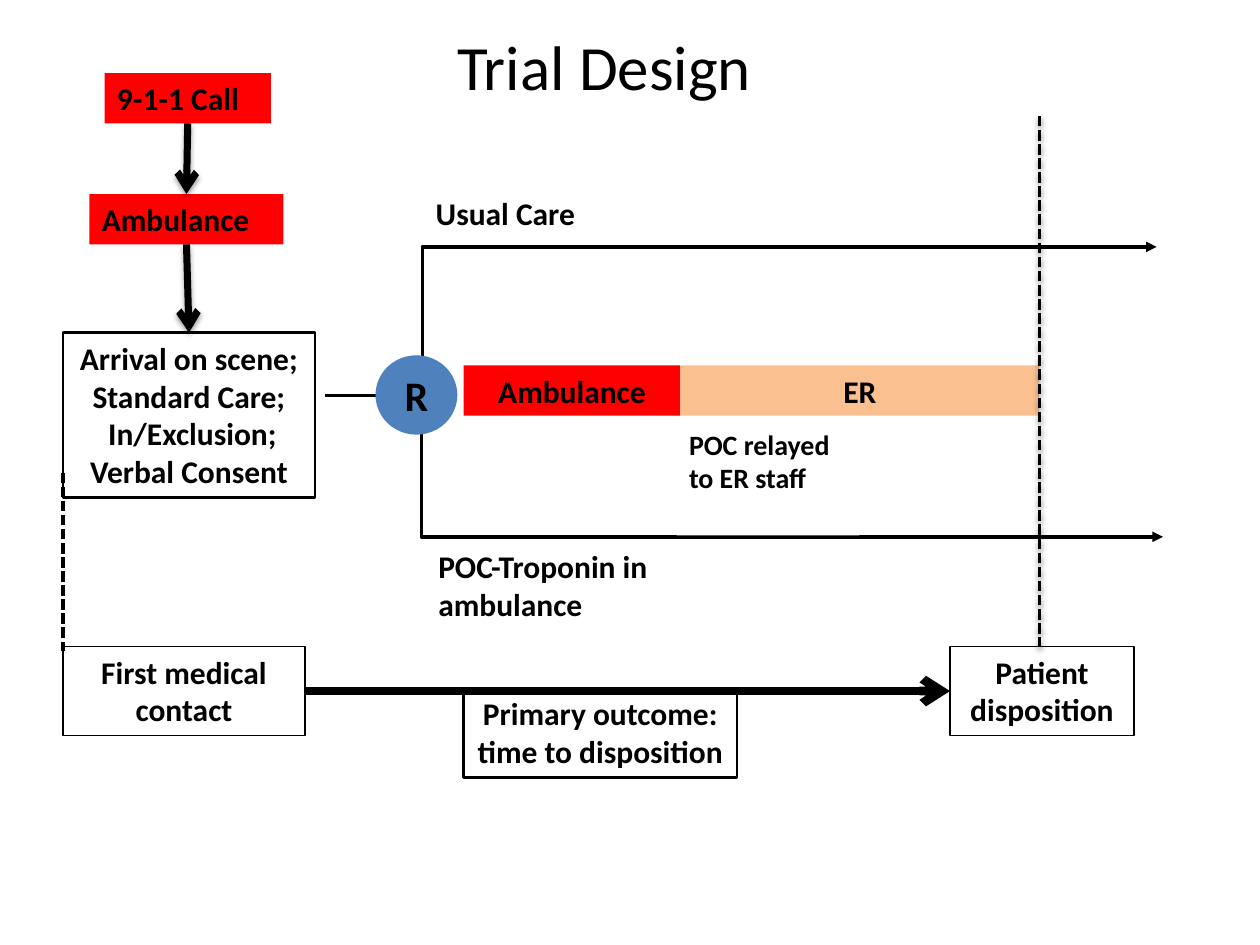
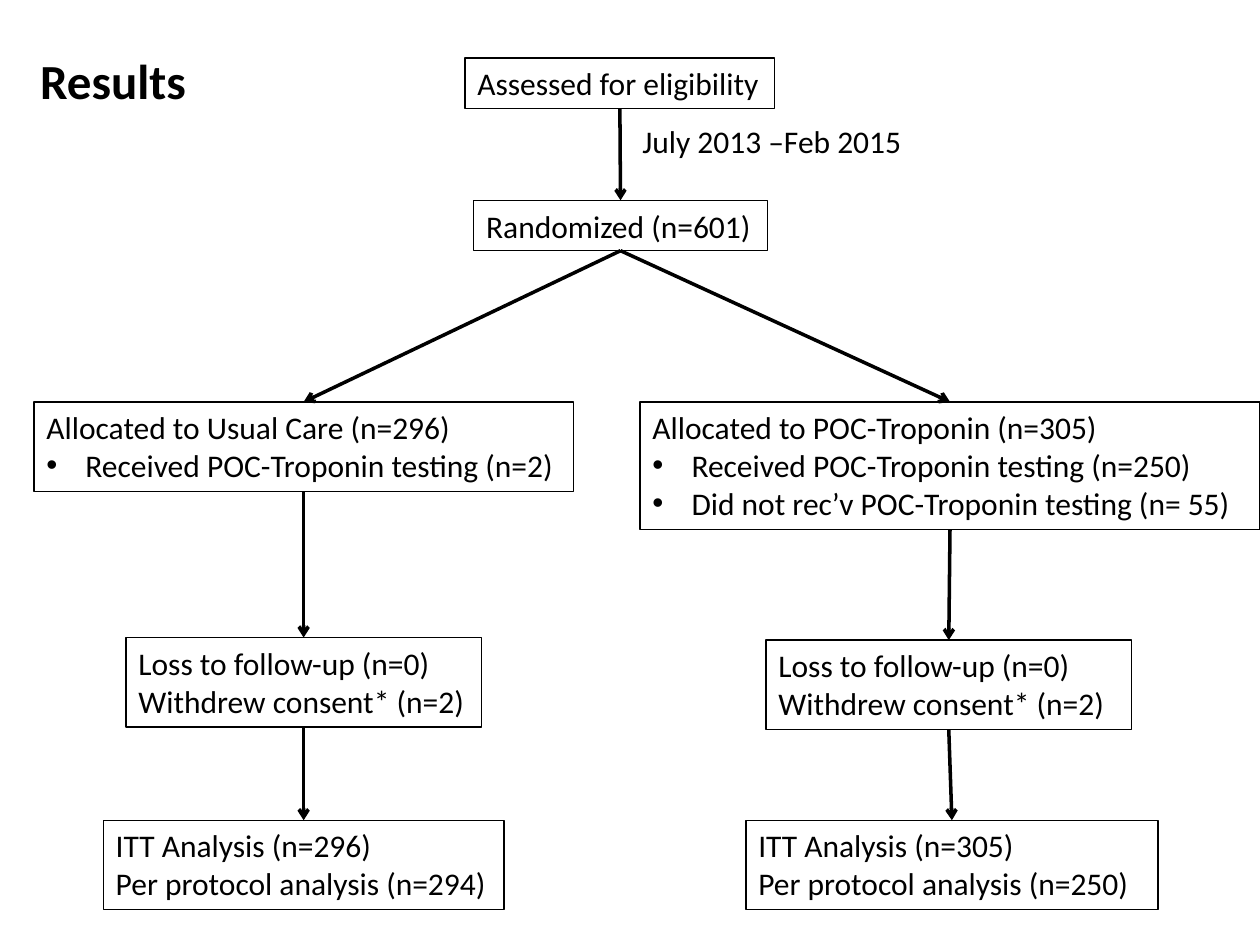
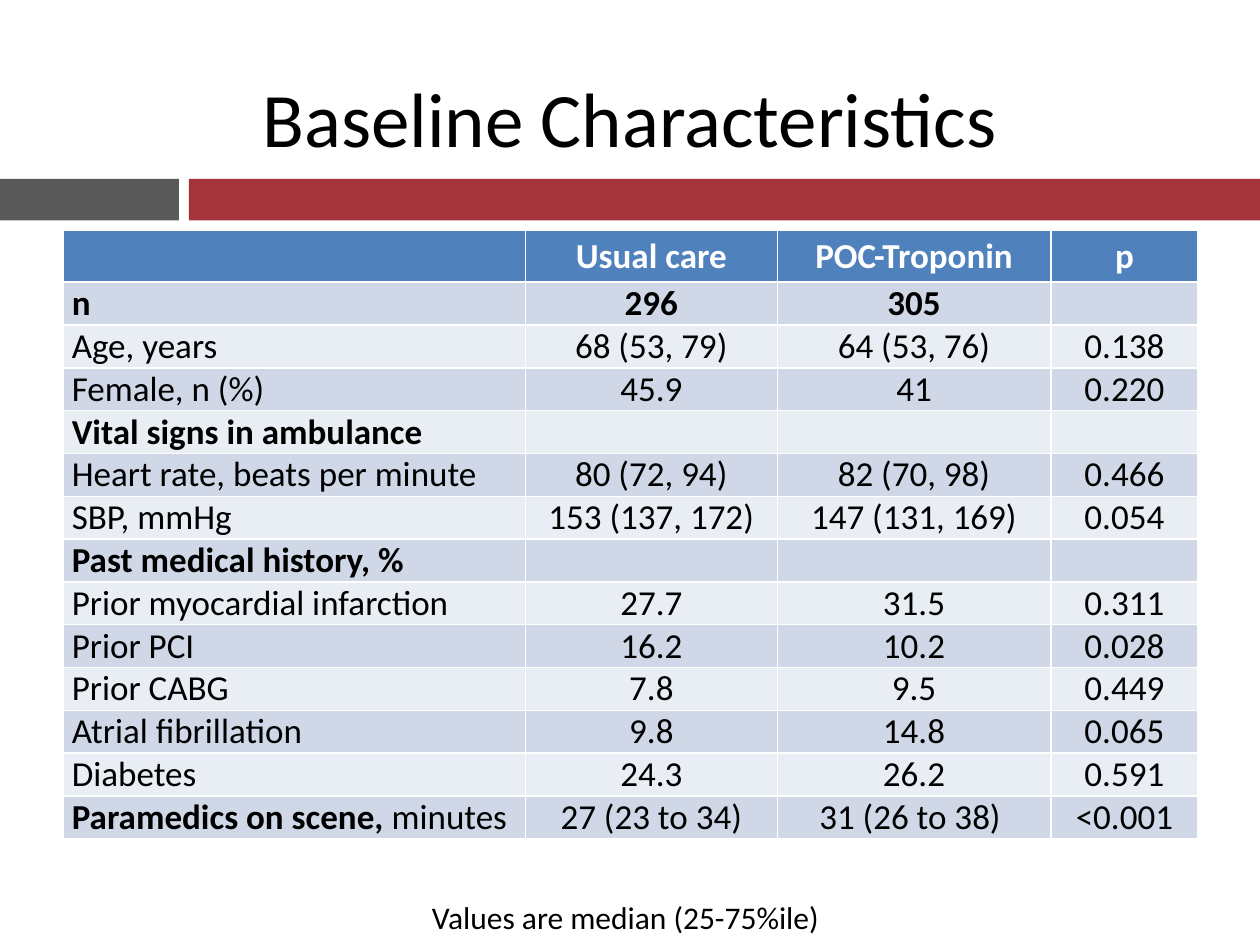
from dataclasses import dataclass

from lxml.etree import SubElement
from pptx import Presentation
from pptx.dml.color import RGBColor
from pptx.enum.dml import MSO_LINE
from pptx.enum.shapes import MSO_CONNECTOR, MSO_SHAPE
from pptx.enum.text import MSO_ANCHOR, PP_ALIGN
from pptx.oxml.ns import qn
from pptx.util import Inches, Pt


@dataclass(frozen=True)
class Theme:
    font: str = "Calibri"
    black: str = "000000"
    white: str = "FFFFFF"
    blue: str = "4F81BD"
    red: str = "FF0000"
    peach: str = "FAC090"
    grey_band: str = "595959"
    red_band: str = "A4343A"
    dark_row: str = "D0D8E8"
    light_row: str = "E9EDF4"
    note: int = 16
    body: int = 18
    cell: int = 20
    mark: int = 24
    heading: int = 28
    design_title: int = 36
    title: int = 44


THEME = Theme()
THIN, MEDIUM, THICK, HEAVY = 0.75, 2, 4, 5

BOLD = dict(bold=True)
CENTRED = dict(bold=True, align=PP_ALIGN.CENTER)
FRAMED = dict(line=THEME.black)
ALERT = dict(fill=THEME.red)
TITLE = dict(align=PP_ALIGN.CENTER, anchor=MSO_ANCHOR.MIDDLE)

BANDS = [
    ((0, 1.42, 1.42, 0.33), THEME.grey_band),
    ((1.5, 1.42, 8.5, 0.33), THEME.red_band),
]

RANDOM_PATHS = [
    ((2.58, 3.14), (9.18, 1.96), 0.117),
    ((2.58, 3.14), (9.23, 4.26), 0.115),
]
DESIGN_BOXES = {
    "arrival": ((0.5, 2.64, 2, 1.31),
                ["Arrival on scene; Standard Care;", " In/Exclusion;", "Verbal Consent"],
                {**CENTRED, **FRAMED, "width": 1.5}),
    "relay": ((5.37, 3.34, 1.45, 0.91), ["POC relayed to ER staff"],
              {**BOLD, "fill": THEME.white, "size": THEME.note}),
    "troponin": ((3.38, 4.29, 1.88, 0.71), ["POC-Troponin in ambulance"],
                 {**BOLD, "line": THEME.white, "width": MEDIUM}),
    "usual": ((3.36, 1.49, 1.88, 0.4), ["Usual Care"], BOLD),
    "random": ((2.98, 2.82, 0.65, 0.63), ["R"],
               {**CENTRED, "fill": THEME.blue, "size": THEME.mark,
                "anchor": MSO_ANCHOR.MIDDLE, "preset": MSO_SHAPE.OVAL}),
    "call": ((0.83, 0.58, 1.32, 0.4), ["9-1-1 Call"], {**BOLD, **ALERT}),
    "dispatch": ((0.71, 1.54, 1.54, 0.4), ["Ambulance"], {**BOLD, **ALERT}),
    "transport": ((3.68, 2.9, 1.72, 0.4), ["Ambulance"], {**CENTRED, **ALERT}),
    "er": ((5.4, 2.9, 2.85, 0.4), ["ER"], {**CENTRED, "fill": THEME.peach}),
    "outcome": ((3.68, 5.46, 2.17, 0.71), ["Primary outcome:", "time to disposition"],
                {**CENTRED, **FRAMED, "width": 1.5}),
    "contact": ((0.5, 5.13, 1.92, 0.71), ["First medical contact"], {**CENTRED, **FRAMED}),
    "disposition": ((7.54, 5.13, 1.46, 0.71), ["Patient disposition"], {**CENTRED, **FRAMED}),
}
TIME_MARKS = [
    ((8.25, 0.92), (8.25, 5.13), True),
    ((0.5, 3.75), (0.5, 5.17), False),
]
BOTTOM_TO_TOP, RIGHT_TO_LEFT = (2, 0), (3, 1)
DESIGN_ARROWS = [
    ("call", "dispatch", BOTTOM_TO_TOP, dict(width=THICK, shadow=True)),
    ("dispatch", "arrival", BOTTOM_TO_TOP, dict(width=THICK, shadow=True)),
    ("contact", "disposition", RIGHT_TO_LEFT, dict(width=HEAVY)),
]

BULLET = "• "
FLOW_BOXES = {
    "assessed": ((3.69, 0.46, 2.46, 0.4), ["Assessed for eligibility"]),
    "randomized": ((3.76, 1.59, 2.33, 0.4), ["Randomized (n=601)"]),
    "usual": ((0.27, 3.19, 4.28, 0.71),
              ["Allocated to Usual Care (n=296)",
               BULLET + "Received POC-Troponin testing (n=2)"]),
    "usual loss": ((1, 5.06, 2.82, 0.71),
                   ["Loss to follow-up (n=0)", "Withdrew consent* (n=2)"]),
    "usual analysis": ((0.82, 6.51, 3.18, 0.71),
                       ["ITT Analysis (n=296)", "Per protocol analysis (n=294)"]),
    "poc": ((5.08, 3.19, 4.92, 1.01),
            ["Allocated to POC-Troponin (n=305)",
             BULLET + "Received POC-Troponin testing (n=250)",
             BULLET + "Did not rec’v POC-Troponin testing (n= 55)"]),
    "poc loss": ((6.08, 5.08, 2.9, 0.71),
                 ["Loss to follow-up (n=0)", "Withdrew consent* (n=2)"]),
    "poc analysis": ((5.92, 6.51, 3.27, 0.71),
                     ["ITT Analysis (n=305)", "Per protocol analysis (n=250)"]),
}
FLOW_STEPS = [("assessed", "randomized")] + [
    step for arm in ("usual", "poc")
    for step in (("randomized", arm), (arm, f"{arm} loss"), (f"{arm} loss", f"{arm} analysis"))
]

COLUMN_WIDTHS = [3.67, 2, 2.17, 1.17]
HEADER_HEIGHT, ROW_HEIGHT = 0.41, 0.34
HEADINGS = ["", "Usual care", "POC-Troponin", "p"]
CHARACTERISTICS = [
    ("n", "", "296", "305", ""),
    ("", "Age, years", "68 (53, 79)", "64 (53, 76)", "0.138"),
    ("", "Female, n (%)", "45.9", "41", "0.220"),
    ("Vital signs in ambulance", "", "", "", ""),
    ("", "Heart rate, beats per minute", "80 (72, 94)", "82 (70, 98)", "0.466"),
    ("", "SBP, mmHg", "153 (137, 172)", "147 (131, 169)", "0.054"),
    ("Past medical history, %", "", "", "", ""),
    ("", "Prior myocardial infarction", "27.7", "31.5", "0.311"),
    ("", "Prior PCI", "16.2", "10.2", "0.028"),
    ("", "Prior CABG", "7.8", "9.5", "0.449"),
    ("", "Atrial fibrillation", "9.8", "14.8", "0.065"),
    ("", "Diabetes", "24.3", "26.2", "0.591"),
    ("Paramedics on scene, ", "minutes", "27 (23 to 34)", "31 (26 to 38) ", "<0.001"),
]


def apply(target, values):
    for name, value in values.items():
        setattr(target, name, value)


def rgb(colour):
    return RGBColor.from_string(colour)


def add_run(paragraph, words, size, bold=False, colour=THEME.black):
    run = paragraph.add_run()
    run.text = words
    apply(run.font, dict(name=THEME.font, size=Pt(size), bold=bold))
    run.font.color.rgb = rgb(colour)


def add_bullet(paragraph):
    properties = paragraph._p.get_or_add_pPr()
    properties.set("marL", str(Inches(0.31)))
    properties.set("indent", str(-Inches(0.31)))
    SubElement(properties, qn("a:buFont"), typeface="Arial")
    SubElement(properties, qn("a:buChar"), char=BULLET.strip())


def add_box(slide, place, lines=(), fill=None, line=None, width=THIN, size=THEME.body,
            bold=False, align=PP_ALIGN.LEFT, anchor=MSO_ANCHOR.TOP,
            preset=MSO_SHAPE.RECTANGLE):
    area = [Inches(length) for length in place]
    if fill or line:
        box = slide.shapes.add_shape(preset, *area)
        box.shadow.inherit = False
    else:
        box = slide.shapes.add_textbox(*area)
    if fill:
        box.fill.solid()
        box.fill.fore_color.rgb = rgb(fill)
    else:
        box.fill.background()
    if line:
        box.line.color.rgb = rgb(line)
        box.line.width = Pt(width)
    else:
        box.line.fill.background()
    frame = box.text_frame
    apply(frame, dict(word_wrap=True, vertical_anchor=anchor))
    for index, words in enumerate(lines):
        paragraph = frame.add_paragraph() if index else frame.paragraphs[0]
        paragraph.alignment = align
        if words.startswith(BULLET):
            add_bullet(paragraph)
        add_run(paragraph, words.removeprefix(BULLET), size, bold)
    return box


def add_line(slide, start=(0, 0), end=(0, 0), route=MSO_CONNECTOR.STRAIGHT,
             width=MEDIUM, head=None, dash=None, shadow=False):
    connector = slide.shapes.add_connector(
        route, *(Inches(length) for length in (*start, *end)))
    connector.line.color.rgb = rgb(THEME.black)
    apply(connector.line, dict(width=Pt(width), dash_style=dash))
    properties = connector._element.spPr
    if head:
        SubElement(properties.find(qn("a:ln")), qn("a:tailEnd"), type=head)
    effects = SubElement(properties, qn("a:effectLst"))
    if shadow:
        cast = SubElement(effects, qn("a:outerShdw"), blurRad=str(Pt(3.1)),
                          dist=str(Pt(1.6)), dir="5400000", rotWithShape="0")
        tint = SubElement(cast, qn("a:srgbClr"), val=THEME.black)
        SubElement(tint, qn("a:alpha"), val="38000")
    return connector


def add_arrow(slide, source, target, sites=BOTTOM_TO_TOP, **look):
    arrow = add_line(slide, head="arrow", **look)
    arrow.begin_connect(source, sites[0])
    arrow.end_connect(target, sites[1])


def add_random_path(slide, start, end, bend):
    path = add_line(slide, start, end, MSO_CONNECTOR.ELBOW, head="triangle")
    geometry = path._element.spPr.find(qn("a:prstGeom"))
    guides = geometry.find(qn("a:avLst"))
    if guides is None:
        guides = SubElement(geometry, qn("a:avLst"))
    SubElement(guides, qn("a:gd"), name="adj1", fmla=f"val {round(bend * 100000)}")


def build_trial_design(slide):
    add_box(slide, (1.17, 0, 7.25, 1.03), ["Trial Design"], size=THEME.design_title, **TITLE)
    for start, end, bend in RANDOM_PATHS:
        add_random_path(slide, start, end, bend)
    steps = {name: add_box(slide, place, lines, **look)
             for name, (place, lines, look) in DESIGN_BOXES.items()}
    for start, end, shadow in TIME_MARKS:
        add_line(slide, start, end, dash=MSO_LINE.SQUARE_DOT, shadow=shadow)
    for source, target, sites, look in DESIGN_ARROWS:
        add_arrow(slide, steps[source], steps[target], sites, **look)


def build_results(slide):
    steps = {name: add_box(slide, place, lines, **FRAMED)
             for name, (place, lines) in FLOW_BOXES.items()}
    for source, target in FLOW_STEPS:
        add_arrow(slide, steps[source], steps[target])
    add_box(slide, (5, 0.92, 2.34, 0.4), ["July 2013 –Feb 2015"])
    add_box(slide, (0.22, 0.35, 1.38, 0.57), ["Results"], size=THEME.heading, bold=True)


def fill_cell(cell, runs, fill, centred, colour=THEME.black):
    apply(cell, dict(margin_left=Inches(0.07), margin_right=Inches(0.07),
                     margin_top=0, margin_bottom=0, vertical_anchor=MSO_ANCHOR.MIDDLE))
    cell.fill.solid()
    cell.fill.fore_color.rgb = rgb(fill)
    paragraph = cell.text_frame.paragraphs[0]
    paragraph.alignment = PP_ALIGN.CENTER if centred else PP_ALIGN.LEFT
    for words, bold in runs:
        if words:
            add_run(paragraph, words, THEME.cell, bold, colour)


def build_baseline(slide):
    for place, colour in BANDS:
        add_box(slide, place, fill=colour)
    add_box(slide, (0.5, 0.3, 9, 1.25), ["Baseline Characteristics"], size=THEME.title, **TITLE)
    heights = [HEADER_HEIGHT] + [ROW_HEIGHT] * len(CHARACTERISTICS)
    table = slide.shapes.add_table(
        len(heights), len(COLUMN_WIDTHS), Inches(0.5), Inches(1.83),
        Inches(sum(COLUMN_WIDTHS)), Inches(sum(heights))).table
    for column, width in zip(table.columns, COLUMN_WIDTHS):
        column.width = Inches(width)
    for row, height in zip(table.rows, heights):
        row.height = Inches(height)
    for column, heading in enumerate(HEADINGS):
        fill_cell(table.cell(0, column), [(heading, True)], THEME.blue, True, THEME.white)
    for row, (strong, plain, *values) in enumerate(CHARACTERISTICS, 1):
        fill = THEME.dark_row if row % 2 else THEME.light_row
        fill_cell(table.cell(row, 0), [(strong, True), (plain, False)], fill, False)
        for column, value in enumerate(values, 1):
            fill_cell(table.cell(row, column), [(value, not plain)], fill, True)
    add_box(slide, (3.33, 7.08, 3.32, 0.4), ["Values are median (25-75%ile)"])


def main():
    deck = Presentation()
    apply(deck, dict(slide_width=Inches(10), slide_height=Inches(7.5)))
    for build in (build_trial_design, build_results, build_baseline):
        build(deck.slides.add_slide(deck.slide_layouts[6]))
    deck.save("out.pptx")


if __name__ == "__main__":
    main()
